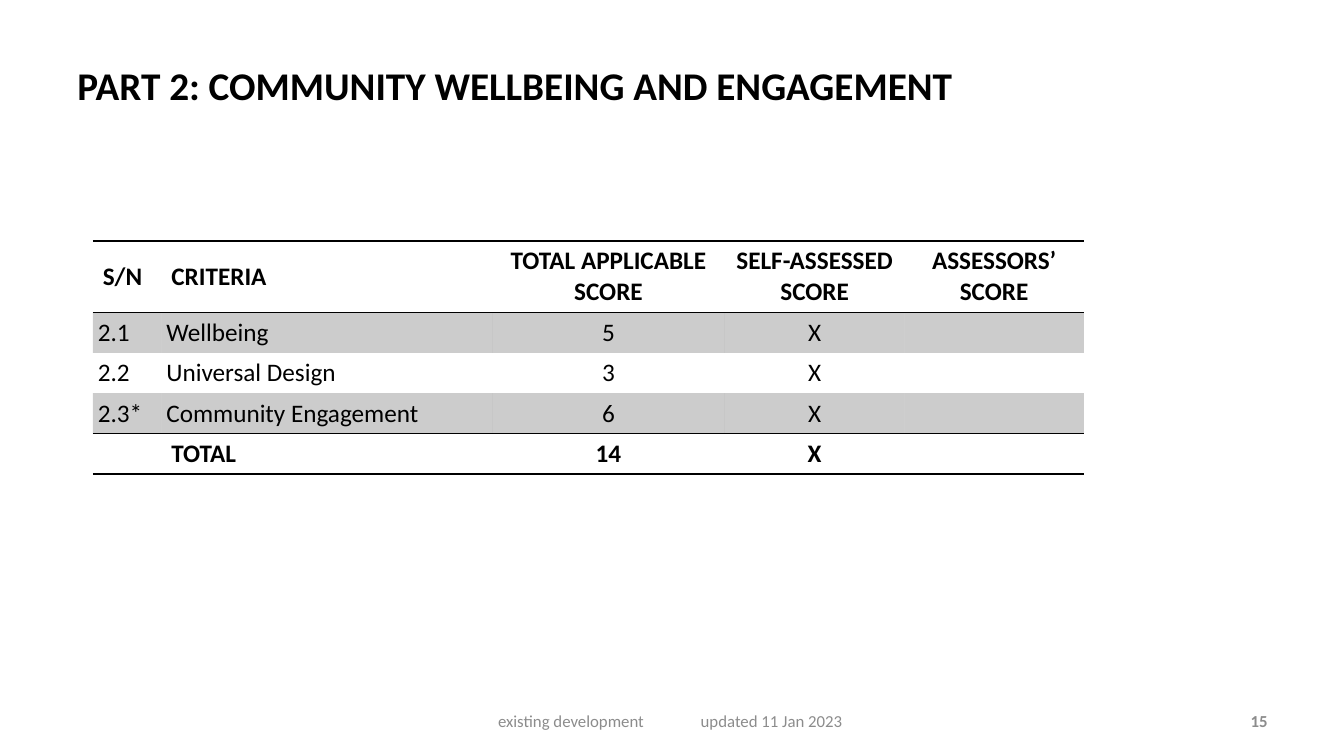
from dataclasses import dataclass

from lxml.etree import SubElement
from pptx import Presentation
from pptx.dml.color import RGBColor
from pptx.enum.text import MSO_ANCHOR, PP_ALIGN
from pptx.oxml.ns import qn
from pptx.slide import Slide
from pptx.table import _Cell as Cell
from pptx.text.text import _Paragraph as Paragraph
from pptx.util import Emu, Pt

EMU_PER_PX = 9144
FONT = "Calibri"
BLACK = RGBColor(0x00, 0x00, 0x00)
GRAY = RGBColor(0x8C, 0x8C, 0x8C)
BAND_ALPHA = "20000"
COLUMN_WIDTHS = (68, 328, 231, 178, 178)
ROW_HEIGHTS = (71, 40, 40, 40, 40)
TABLE_LEFT, TABLE_TOP = 92, 239
ROWS = (
    ("S/N", "CRITERIA", "TOTAL APPLICABLE SCORE", "SELF-ASSESSED SCORE", "ASSESSORS’ SCORE"),
    ("2.1", "Wellbeing", "5", "X", ""),
    ("2.2", "Universal Design", "3", "X", ""),
    ("2.3*", "Community Engagement", "6", "X", ""),
    ("", "TOTAL", "14", "X", ""),
)
LAST_ROW = len(ROWS) - 1
RULED_ABOVE = (0, 1, LAST_ROW)
RULED_BELOW = (0, LAST_ROW - 1, LAST_ROW)


@dataclass(frozen=True)
class Label:
    text: str
    left: int
    top: int
    width: int
    height: int
    size: int
    color: RGBColor
    bold: bool = False
    align: PP_ALIGN = PP_ALIGN.LEFT
    inset: int = 10
    tab: int = 0


LABELS = (
    Label("PART 2: COMMUNITY WELLBEING AND ENGAGEMENT", 67, 30, 1036, 109, 28, BLACK, True),
    Label("existing development\tupdated 11 Jan 2023", 456, 695, 422, 40, 12, GRAY, inset=38, tab=201),
    Label("15", 956, 695, 311, 40, 12, GRAY, True, PP_ALIGN.RIGHT),
)


def px(length: int) -> Emu:
    return Emu(length * EMU_PER_PX)


def add_text(paragraph: Paragraph, text: str, size: int, color: RGBColor, bold: bool) -> None:
    run = paragraph.add_run()
    run.text = text
    run.font.name = FONT
    run.font.size = Pt(size)
    run.font.bold = bold
    run.font.color.rgb = color


def add_label(slide: Slide, label: Label) -> None:
    shape = slide.shapes.add_textbox(px(label.left), px(label.top), px(label.width), px(label.height))
    frame = shape.text_frame
    frame.word_wrap = True
    frame.vertical_anchor = MSO_ANCHOR.MIDDLE
    frame.margin_left = px(label.inset)
    paragraph = frame.paragraphs[0]
    paragraph.alignment = label.align
    if label.tab:
        properties = paragraph._p.get_or_add_pPr()
        tabs = SubElement(properties, qn("a:tabLst"))
        SubElement(tabs, qn("a:tab"), pos=str(px(label.tab)), algn="l")
    add_text(paragraph, label.text, label.size, label.color, label.bold)


def set_borders(cell: Cell, row: int) -> None:
    properties = cell._tc.get_or_add_tcPr()
    ruled = {"lnL": False, "lnR": False, "lnT": row in RULED_ABOVE, "lnB": row in RULED_BELOW}
    for side, visible in ruled.items():
        line = SubElement(properties, qn(f"a:{side}"), w=str(Pt(1)))
        if visible:
            fill = SubElement(line, qn("a:solidFill"))
            SubElement(fill, qn("a:srgbClr"), val=str(BLACK))
        else:
            SubElement(line, qn("a:noFill"))


def set_fill(cell: Cell, banded: bool) -> None:
    if not banded:
        cell.fill.background()
        return
    cell.fill.solid()
    cell.fill.fore_color.rgb = BLACK
    color = cell._tc.tcPr.find(f"{qn('a:solidFill')}/{qn('a:srgbClr')}")
    SubElement(color, qn("a:alpha"), val=BAND_ALPHA)


def fill_cell(cell: Cell, text: str, row: int, column: int) -> None:
    body = 0 < row < LAST_ROW
    cell.vertical_anchor = MSO_ANCHOR.MIDDLE
    if body and column < 2:
        cell.vertical_anchor = MSO_ANCHOR.BOTTOM
        cell.margin_left = cell.margin_right = px(5)
        cell.margin_top = cell.margin_bottom = px(5)
    set_borders(cell, row)
    set_fill(cell, body and row % 2 == 1)
    paragraph = cell.text_frame.paragraphs[0]
    paragraph.alignment = PP_ALIGN.CENTER if column >= 2 else PP_ALIGN.LEFT
    if text:
        add_text(paragraph, text, 18, BLACK, not body)


def add_score_table(slide: Slide) -> None:
    table = slide.shapes.add_table(
        len(ROWS), len(COLUMN_WIDTHS), px(TABLE_LEFT), px(TABLE_TOP),
        px(sum(COLUMN_WIDTHS)), px(sum(ROW_HEIGHTS)),
    ).table
    table.first_row = False
    table.horz_banding = False
    for column, width in zip(table.columns, COLUMN_WIDTHS):
        column.width = px(width)
    for row, height in zip(table.rows, ROW_HEIGHTS):
        row.height = px(height)
    for row_index, texts in enumerate(ROWS):
        for column_index, text in enumerate(texts):
            fill_cell(table.cell(row_index, column_index), text, row_index, column_index)


def main() -> None:
    presentation = Presentation()
    presentation.slide_width = px(1333)
    presentation.slide_height = px(750)
    slide = presentation.slides.add_slide(presentation.slide_layouts[6])
    for label in LABELS:
        add_label(slide, label)
    add_score_table(slide)
    presentation.save("out.pptx")


if __name__ == "__main__":
    main()
